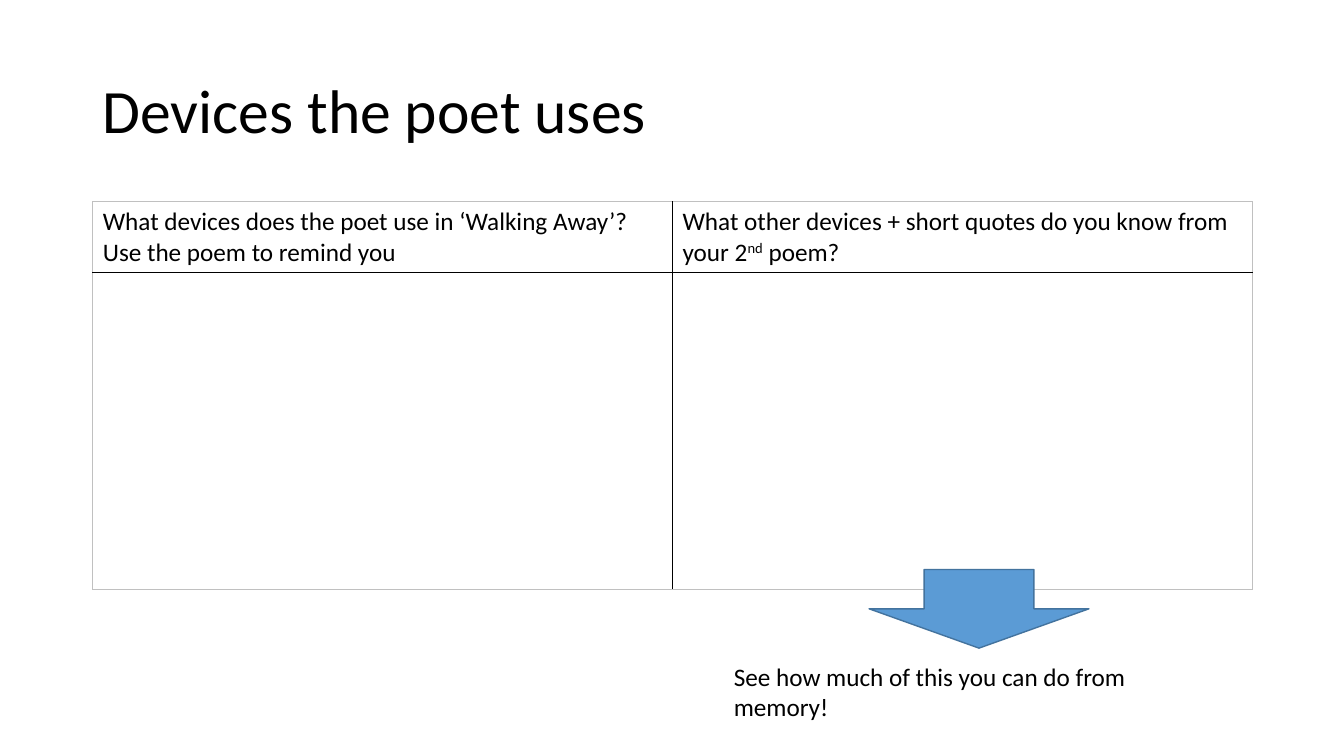
from dataclasses import dataclass

from lxml import etree
from pptx import Presentation
from pptx.dml.color import RGBColor
from pptx.enum.shapes import MSO_SHAPE
from pptx.enum.text import MSO_ANCHOR
from pptx.oxml.ns import qn
from pptx.util import Inches, Pt

DOWN_ARROW = MSO_SHAPE.DOWN_ARROW
TOP, MIDDLE = MSO_ANCHOR.TOP, MSO_ANCHOR.MIDDLE
BLANK_LAYOUT = 6


@dataclass(frozen=True)
class Theme:
    font: str = "Calibri"
    title_size: int = 44
    body_size: int = 18
    ink: str = "000000"
    paper: str = "FFFFFF"
    frame: str = "C0C0C0"
    arrow: str = "5B9BD5"
    arrow_edge: str = "43739E"
    inner_width: float = 1
    frame_width: float = 0.5


THEME = Theme()

# Each question is a list of paragraphs; each paragraph is (text, baseline) runs
QUESTIONS = [
    [
        [("What devices does the poet use in ‘Walking Away’?", 0)],
        [("Use the poem to remind you", 0)],
    ],
    [
        [
            ("What other devices + short quotes do you know from your 2", 0),
            ("nd", 30),
            (" poem?", 0),
        ],
    ],
]


def rgb(value):
    return RGBColor.from_string(value)


def write(frame, paragraphs, size, line_spacing=1.0):
    font_format = {"name": THEME.font, "size": Pt(size)}
    for index, runs in enumerate(paragraphs):
        paragraph = frame.add_paragraph() if index else frame.paragraphs[0]
        paragraph.line_spacing = line_spacing
        for text, baseline in runs:
            run = paragraph.add_run()
            run.text = text
            for attribute, value in font_format.items():
                setattr(run.font, attribute, value)
            run.font.color.rgb = rgb(THEME.ink)
            if baseline:
                run._r.get_or_add_rPr().set("baseline", str(baseline * 1000))


def add_text(slide, box, text, size, anchor=TOP, line_spacing=1.0):
    frame = slide.shapes.add_textbox(*map(Inches, box)).text_frame
    frame.word_wrap = True
    frame.vertical_anchor = anchor
    write(frame, [[(text, 0)]], size, line_spacing)


def set_border(cell, side, color, width):
    line = etree.SubElement(
        cell._tc.get_or_add_tcPr(), qn(f"a:ln{side}"), w=str(Pt(width))
    )
    fill = etree.SubElement(line, qn("a:solidFill"))
    etree.SubElement(fill, qn("a:srgbClr"), val=color)


def add_question_table(slide, left, top, column_width, row_heights):
    row_count, column_count = len(row_heights), len(QUESTIONS)
    table = slide.shapes.add_table(
        row_count, column_count, Inches(left), Inches(top),
        Inches(column_width * column_count), Inches(sum(row_heights)),
    ).table
    for option in ("first_row", "horz_banding"):
        setattr(table, option, False)
    for column in table.columns:
        column.width = Inches(column_width)

    for r, height in enumerate(row_heights):
        table.rows[r].height = Inches(height)
        for c, question in enumerate(QUESTIONS):
            cell = table.cell(r, c)
            # Pale outer frame, dark inner rules
            on_frame = {
                "L": c == 0,
                "R": c == column_count - 1,
                "T": r == 0,
                "B": r == row_count - 1,
            }
            for side, outer in on_frame.items():
                if outer:
                    set_border(cell, side, THEME.frame, THEME.frame_width)
                else:
                    set_border(cell, side, THEME.ink, THEME.inner_width)
            cell.fill.solid()
            cell.fill.fore_color.rgb = rgb(THEME.paper)
            if r == 0:
                write(cell.text_frame, question, THEME.body_size)


def add_arrow(slide, box):
    arrow = slide.shapes.add_shape(DOWN_ARROW, *map(Inches, box))
    arrow.shadow.inherit = False
    arrow.fill.solid()
    arrow.fill.fore_color.rgb = rgb(THEME.arrow)
    arrow.line.color.rgb = rgb(THEME.arrow_edge)
    arrow.line.width = Pt(1)


def main():
    deck = Presentation()
    deck.slide_width, deck.slide_height = Inches(13.33), Inches(7.5)
    slide = deck.slides.add_slide(deck.slide_layouts[BLANK_LAYOUT])

    # Title
    add_text(slide, (0.92, 0.4, 11.5, 1.45), "Devices the poet uses",
             THEME.title_size, MIDDLE, 0.9)

    # Questions with room for answers
    add_question_table(slide, 0.92, 2, 5.75, (0.7, 3.15))

    # Memory challenge
    add_arrow(slide, (8.62, 5.65, 2.18, 0.78))
    add_text(slide, (7.18, 6.51, 4.54, 0.71),
             "See how much of this you can do from memory!", THEME.body_size)

    deck.save("out.pptx")


if __name__ == "__main__":
    main()
